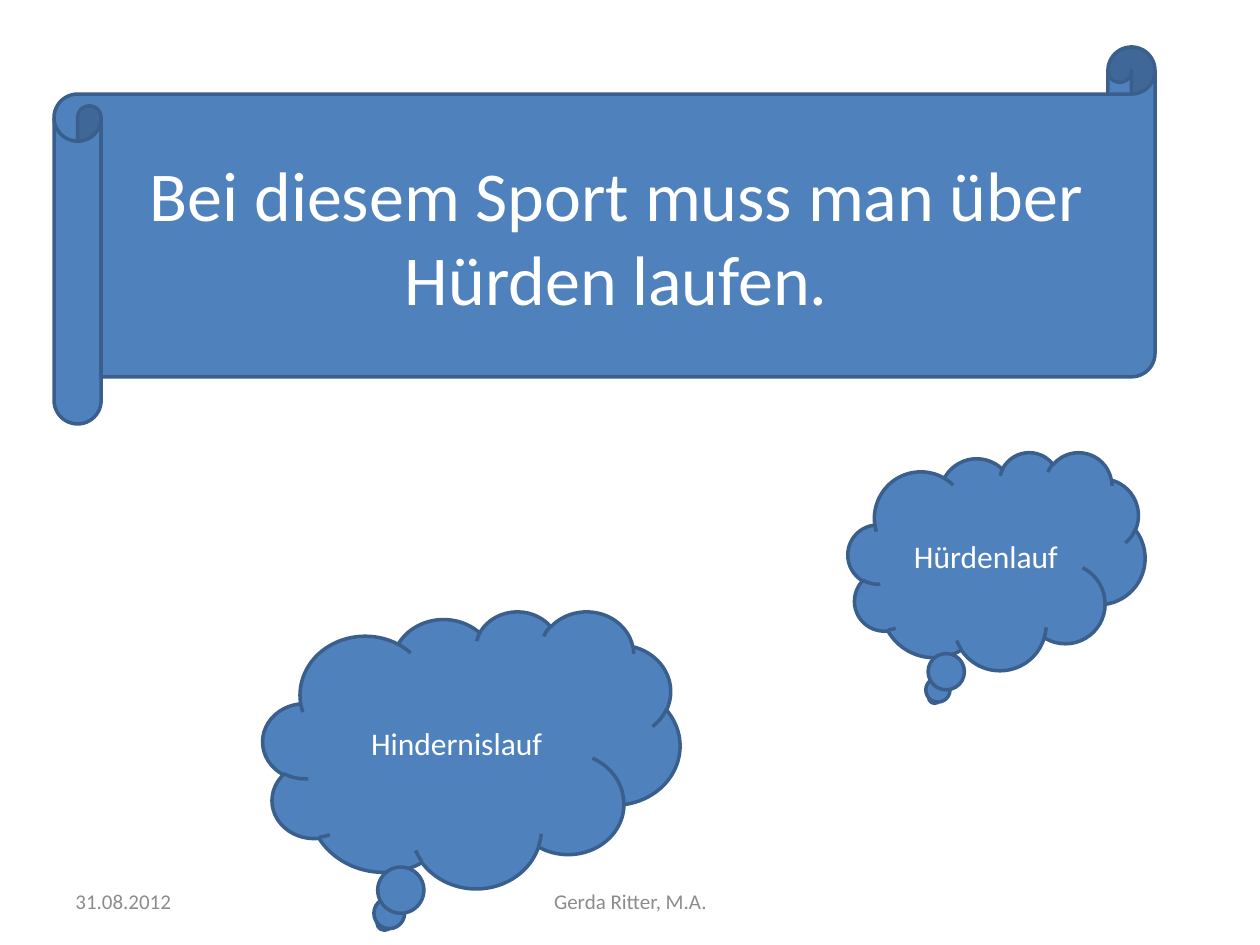
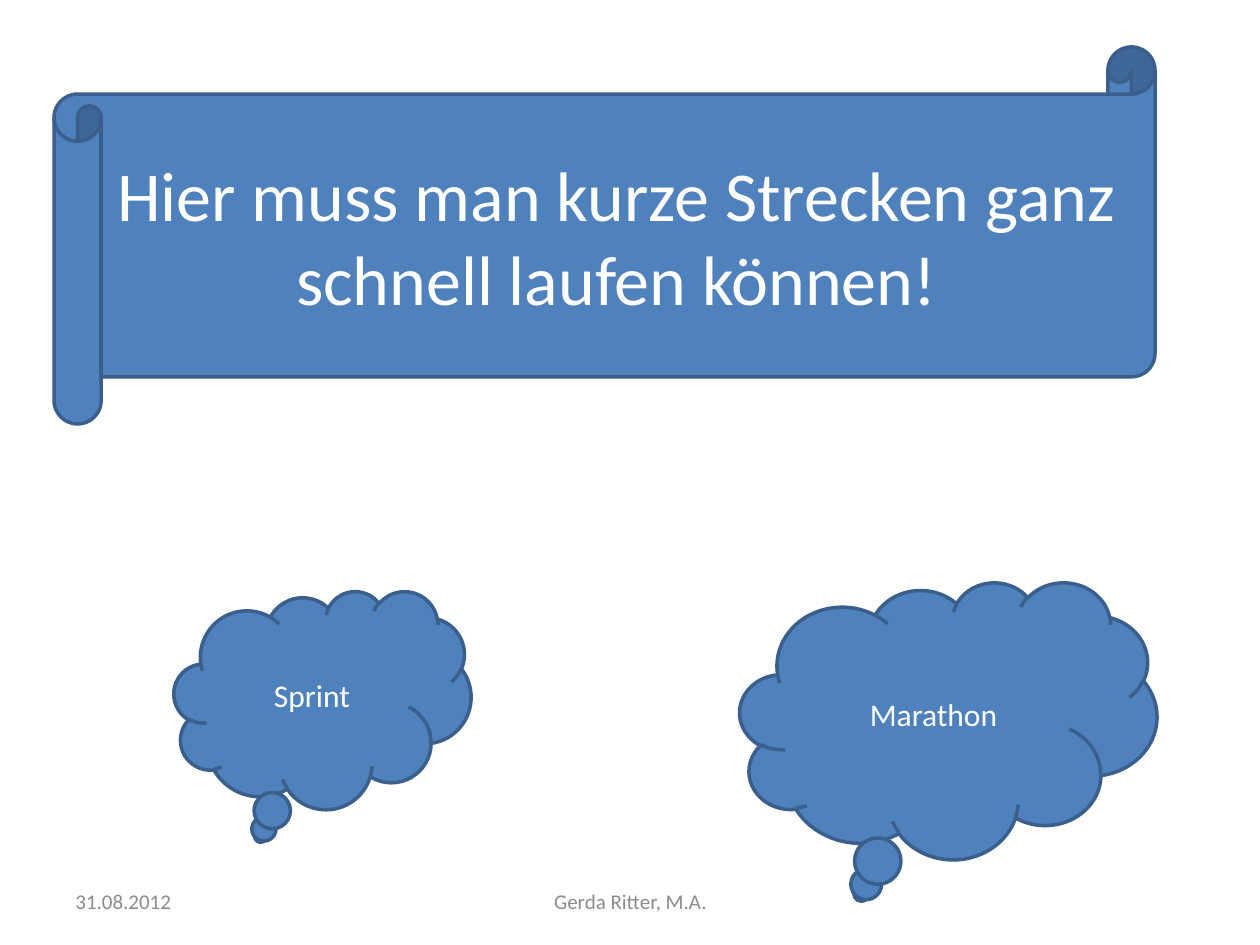
from pptx import Presentation
from pptx.dml.color import RGBColor
from pptx.enum.shapes import MSO_SHAPE
from pptx.enum.text import MSO_ANCHOR, PP_ALIGN
from pptx.util import Pt

SCROLL = MSO_SHAPE.HORIZONTAL_SCROLL
CLOUD = MSO_SHAPE.CLOUD_CALLOUT
MIDDLE = MSO_ANCHOR.MIDDLE
LEFT = PP_ALIGN.LEFT
CENTER = PP_ALIGN.CENTER

BLUE = RGBColor(0x4F, 0x81, 0xBD)
DARK_BLUE = RGBColor(0x3A, 0x5F, 0x8C)
WHITE = RGBColor(0xFF, 0xFF, 0xFF)
GRAY = RGBColor(0x8C, 0x8C, 0x8C)
FONT = "Calibri"

EMU_PER_PX = 914400 / 126
SLIDE_SIZE = (1260, 945)
QUESTION_BOX = (54, 47, 1101, 377)
SMALL_CLOUD = (297, 218)
LARGE_CLOUD = (417, 277)

QUIZ = [
    {
        "question": "Bei diesem Sport muss man über Hürden laufen.",
        "answers": [
            ("Hürdenlauf", (848, 452), SMALL_CLOUD),
            ("Hindernislauf", (263, 611), LARGE_CLOUD),
        ],
    },
    {
        "question": "Hier muss man kurze Strecken ganz schnell laufen können!",
        "answers": [
            ("Sprint", (174, 591), SMALL_CLOUD),
            ("Marathon", (740, 582), LARGE_CLOUD),
        ],
    },
]

FOOTERS = [
    ("31.08.2012", (63, 876, 294, 50), LEFT),
    ("Gerda Ritter, M.A.", (431, 876, 399, 50), CENTER),
]


def to_emu(lengths):
    return [round(length * EMU_PER_PX) for length in lengths]


def write(shape, text, size, color, alignment):
    text_frame = shape.text_frame
    text_frame.word_wrap = True
    text_frame.vertical_anchor = MIDDLE
    text_frame.text = text
    paragraph = text_frame.paragraphs[0]
    paragraph.alignment = alignment
    font = paragraph.runs[0].font
    font.name = FONT
    font.size = Pt(size)
    font.color.rgb = color


def add_blue_shape(slide, kind, box, text, size):
    shape = slide.shapes.add_shape(kind, *to_emu(box))
    shape.shadow.inherit = False
    shape.fill.solid()
    shape.fill.fore_color.rgb = BLUE
    shape.line.color.rgb = DARK_BLUE
    shape.line.width = Pt(2)
    write(shape, text, size, WHITE, CENTER)


def add_footers(slide):
    for text, box, alignment in FOOTERS:
        footer = slide.shapes.add_textbox(*to_emu(box))
        write(footer, text, 12, GRAY, alignment)


def main():
    presentation = Presentation()
    presentation.slide_width, presentation.slide_height = to_emu(SLIDE_SIZE)
    blank_layout = presentation.slide_layouts[6]
    for item in QUIZ:
        slide = presentation.slides.add_slide(blank_layout)
        add_blue_shape(slide, SCROLL, QUESTION_BOX, item["question"], 40)
        for answer, position, size in item["answers"]:
            add_blue_shape(slide, CLOUD, position + size, answer, 18)
        add_footers(slide)
    presentation.save("out.pptx")


if __name__ == "__main__":
    main()
